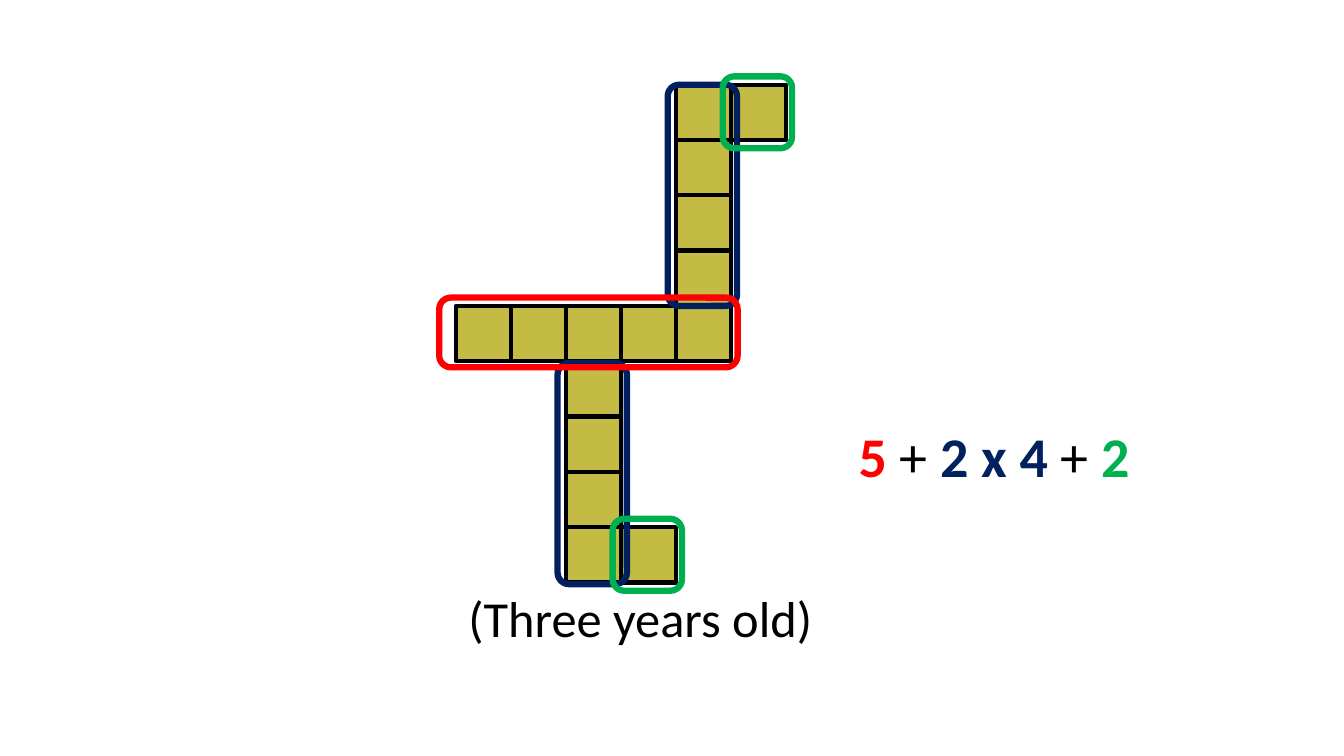
from pptx import Presentation
from pptx import util as u
from pptx.dml.color import RGBColor
from pptx.enum import shapes

BLACK = RGBColor(0, 0, 0)
GOLD = RGBColor(0xC4, 0xBB, 0x44)
RED = RGBColor(0xFF, 0, 0)
NAVY = RGBColor(0, 0x20, 0x60)
GREEN = RGBColor(0, 0xB0, 0x50)
KIND = shapes.MSO_SHAPE


class Board:
    """Draws tiles, rings and text on a grid of columns and rows."""

    font = "Calibri"
    left, top = 4.52, 0.84
    wide, high = 2.73 / 5, 4.39 / 8

    def __init__(self, slide):
        self.slide = slide

    def box(self, col, row, cols, rows):
        return (u.Inches(self.left + col * self.wide), u.Inches(self.top + row * self.high),
                u.Inches(cols * self.wide), u.Inches(rows * self.high))

    def shape(self, kind, area, color, width):
        item = self.slide.shapes.add_shape(kind, *self.box(*area))
        item.shadow.inherit = False
        item.line.color.rgb = color
        item.line.width = u.Pt(width)
        return item

    def tile(self, col, row):
        item = self.shape(KIND.RECTANGLE, (col, row, 1, 1), BLACK, 3)
        item.fill.solid()
        item.fill.fore_color.rgb = GOLD

    def ring(self, area, color):
        item = self.shape(KIND.FLOWCHART_ALTERNATE_PROCESS, area, color, 4.5)
        item.fill.background()

    def text(self, area, size, parts):
        frame = self.slide.shapes.add_textbox(*self.box(*area)).text_frame
        frame.word_wrap = True
        for words, color, bold in parts:
            run = frame.paragraphs[0].add_run()
            run.text = words
            run.font.name = self.font
            run.font.size = u.Pt(size)
            run.font.bold = bold
            run.font.color.rgb = color


def main():
    deck = Presentation()
    deck.slide_width, deck.slide_height = u.Inches(13.33), u.Inches(7.5)
    board = Board(deck.slides.add_slide(deck.slide_layouts[6]))

    bar = [(col, 4) for col in range(5)]
    arms = [(4, row) for row in range(3, -1, -1)] + [(2, row) for row in range(5, 9)]
    tips = [(5, 0), (3, 8)]
    for col, row in bar + arms + tips:
        board.tile(col, row)

    board.text((0.05, 9, 7.78, 1.29), 36, [("(Three years old)", BLACK, False)])
    board.text((7.14, 6, 7.78, 1.4), 40, [
        ("5", RED, True), (" + ", BLACK, False), ("2 x 4 ", NAVY, True),
        ("+ ", BLACK, False), ("2", GREEN, True)])

    for col, row in ((4, 0), (2, 5.03)):
        board.ring((col - 0.15, row, 1.26, 4), NAVY)
    board.ring((-0.3, 3.85, 5.42, 1.26), RED)
    for col, row in tips:
        board.ring((col - 0.15, row - 0.15, 1.26, 1.3), GREEN)

    deck.save("out.pptx")


if __name__ == "__main__":
    main()
